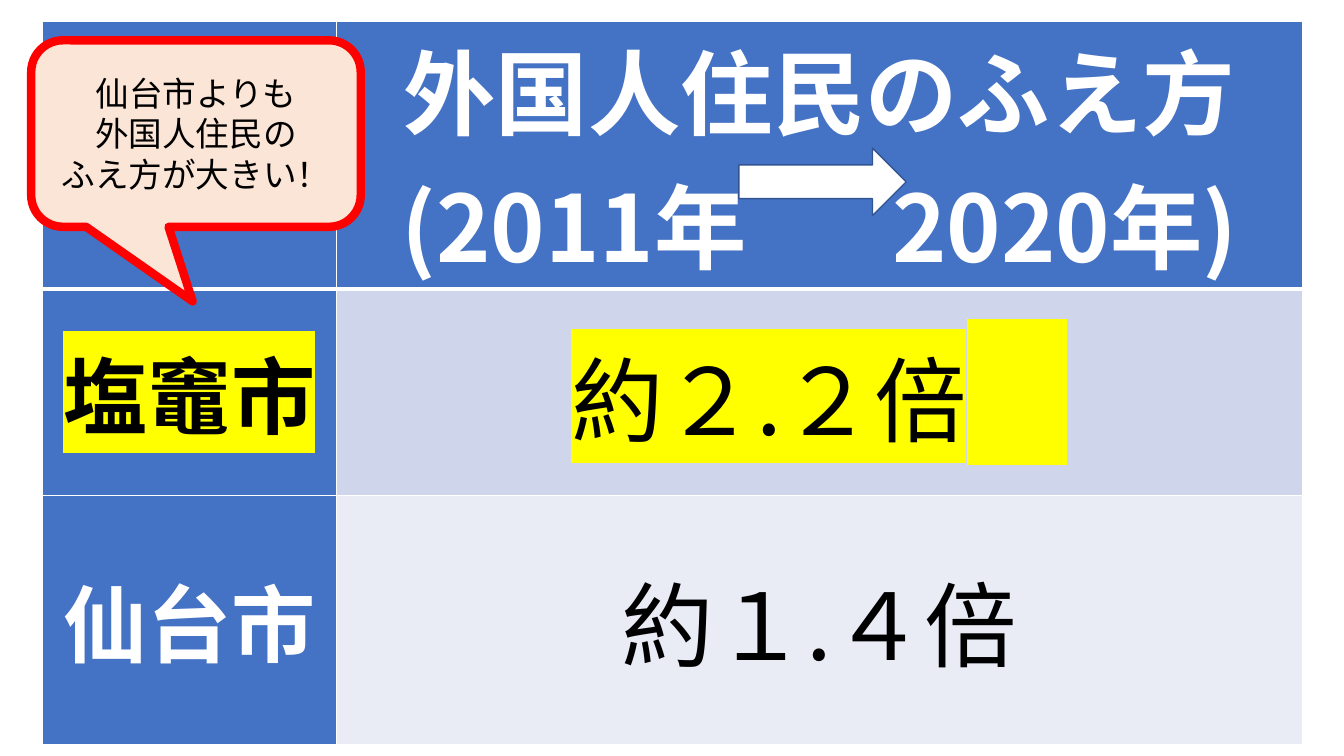
import pptx
import pptx.util
import pptx.dml.color
import pptx.enum.shapes
import pptx.enum.text
import pptx.oxml
import pptx.oxml.ns

Pt = pptx.util.Pt
SHAPE = pptx.enum.shapes.MSO_SHAPE
ALIGN = pptx.enum.text.PP_ALIGN
ANCHOR = pptx.enum.text.MSO_ANCHOR
FONT = "Noto Sans CJK JP"
COLORS = {
    "white": "FFFFFF", "black": "000000", "blue": "4472C4", "mark": "FFFF00",
    "band": "CFD5EA", "pale": "E9EBF5", "peach": "FBE5D6", "red": "FF0000",
    "navy": "325491",
}
HEAD = {"size": Pt(66), "bold": True}
CITY = {"size": Pt(60), "bold": True}
RATE = {"size": Pt(66), "bold": False}
WIDE = {"size": Pt(72), "bold": False}
NOTE = {"size": Pt(24), "bold": False}


def color(name):
    return pptx.dml.color.RGBColor.from_string(COLORS[name])


def node(tag, inner=""):
    space = pptx.oxml.ns.nsdecls("a")
    name = tag.split()[0]
    return pptx.oxml.parse_xml(f"<a:{tag} {space}>{inner}</a:{name}>")


def add_run(para, text, style, ink="black", mark=None, gap=0):
    """Add a run; gap is extra space after each letter, in points."""
    run = para.add_run()
    run.text = text
    for key, value in style.items():
        setattr(run.font, key, value)
    run.font.name = FONT
    run.font.color.rgb = color(ink)
    props = run.font._element
    props.find(pptx.oxml.ns.qn("a:latin")).addnext(node(f'ea typeface="{FONT}"'))
    if mark:
        tint = node("highlight", f'<a:srgbClr val="{COLORS[mark]}"/>')
        props.find(pptx.oxml.ns.qn("a:solidFill")).addnext(tint)
    if gap:
        props.set("spc", str(gap * 100))


def fill_text(frame, lines):
    """Write centred lines, each a list of argument dicts for add_run."""
    for i, line in enumerate(lines):
        para = frame.add_paragraph() if i else frame.paragraphs[0]
        para.alignment = ALIGN.CENTER
        for part in line:
            add_run(para, **part)


def set_cell(cell, fill, lines, anchor, base):
    """Format a cell; base is the width of its bottom border."""
    cell.fill.solid()
    cell.fill.fore_color.rgb = color(fill)
    insets = {"margin_left": Pt(5), "margin_right": Pt(5),
              "margin_top": 0, "margin_bottom": 0}
    for key, value in insets.items():
        setattr(cell, key, value)
    cell.vertical_anchor = anchor
    fill_text(cell.text_frame, lines)
    props = cell._tc.get_or_add_tcPr()
    paint = f'<a:solidFill><a:srgbClr val="{COLORS["white"]}"/></a:solidFill>'
    for i, (side, width) in enumerate(zip("LRTB", (1, 1, 1, base))):
        props.insert(i, node(f'ln{side} w="{Pt(width)}"', paint))


def add_grid(slide, left, top, width, height):
    cols = (210.2, width - 210.2)
    rows = (164.2, 147.6, height - 311.8)
    grid = slide.shapes.add_table(
        3, 2, Pt(left), Pt(top), Pt(width), Pt(height)).table
    for col, size in zip(grid.columns, cols):
        col.width = Pt(size)
    for row, size in zip(grid.rows, rows):
        row.height = Pt(size)
    head = {"style": HEAD, "ink": "white"}
    title = [
        [{"text": "外国人住民のふえ方", **head}],
        [{"text": "(2011年", **head}, {"text": " ", "gap": 89, **head},
         {"text": "2020年)", **head}],
    ]
    first = [[{"text": "塩竈市", "style": CITY, "mark": "mark"}]]
    rise = [[{"text": "約２.２倍", "style": RATE, "mark": "mark"},
             {"text": "　", "style": WIDE, "mark": "mark"}]]
    other = [[{"text": "仙台市", "style": CITY, "ink": "white"}]]
    low = [[{"text": "約１.４倍", "style": RATE}]]
    table = [
        (("blue", []), ("blue", title)),
        (("blue", first), ("band", rise)),
        (("blue", other), ("pale", low)),
    ]
    for r, row in enumerate(table):
        anchor = ANCHOR.MIDDLE if r else ANCHOR.TOP
        for c, (fill, lines) in enumerate(row):
            set_cell(grid.cell(r, c), fill, lines, anchor, 1 if r else 3)


def add_form(slide, kind, box, fill, edge, weight):
    form = slide.shapes.add_shape(kind, *map(Pt, box))
    form.shadow.inherit = False
    form.fill.solid()
    form.fill.fore_color.rgb = color(fill)
    form.line.color.rgb = color(edge)
    form.line.width = Pt(weight)
    return form


def add_note(slide, *box):
    note = add_form(slide, SHAPE.ROUNDED_RECTANGULAR_CALLOUT, box,
                    "peach", "red", 6)
    for i, value in enumerate((-0.01, 0.9, 0.17)):
        note.adjustments[i] = value
    frame = note.text_frame
    frame.word_wrap = True
    frame.vertical_anchor = ANCHOR.MIDDLE
    words = ("仙台市よりも", "外国人住民の", "ふえ方が大きい！")
    fill_text(frame, [[{"text": word, "style": NOTE}] for word in words])


def add_arrow(slide, *box):
    add_form(slide, SHAPE.RIGHT_ARROW, box, "white", "navy", 1)


def main():
    deck = pptx.Presentation()
    deck.slide_width, deck.slide_height = Pt(960), Pt(540)
    slide = deck.slides.add_slide(deck.slide_layouts[6])
    add_grid(slide, 30.2, 15.1, 900, 489.6)
    add_note(slide, 22.3, 28.8, 235.4, 133.2)
    add_arrow(slide, 527.8, 105.8, 119.5, 48.2)
    deck.save("out.pptx")


if __name__ == "__main__":
    main()
